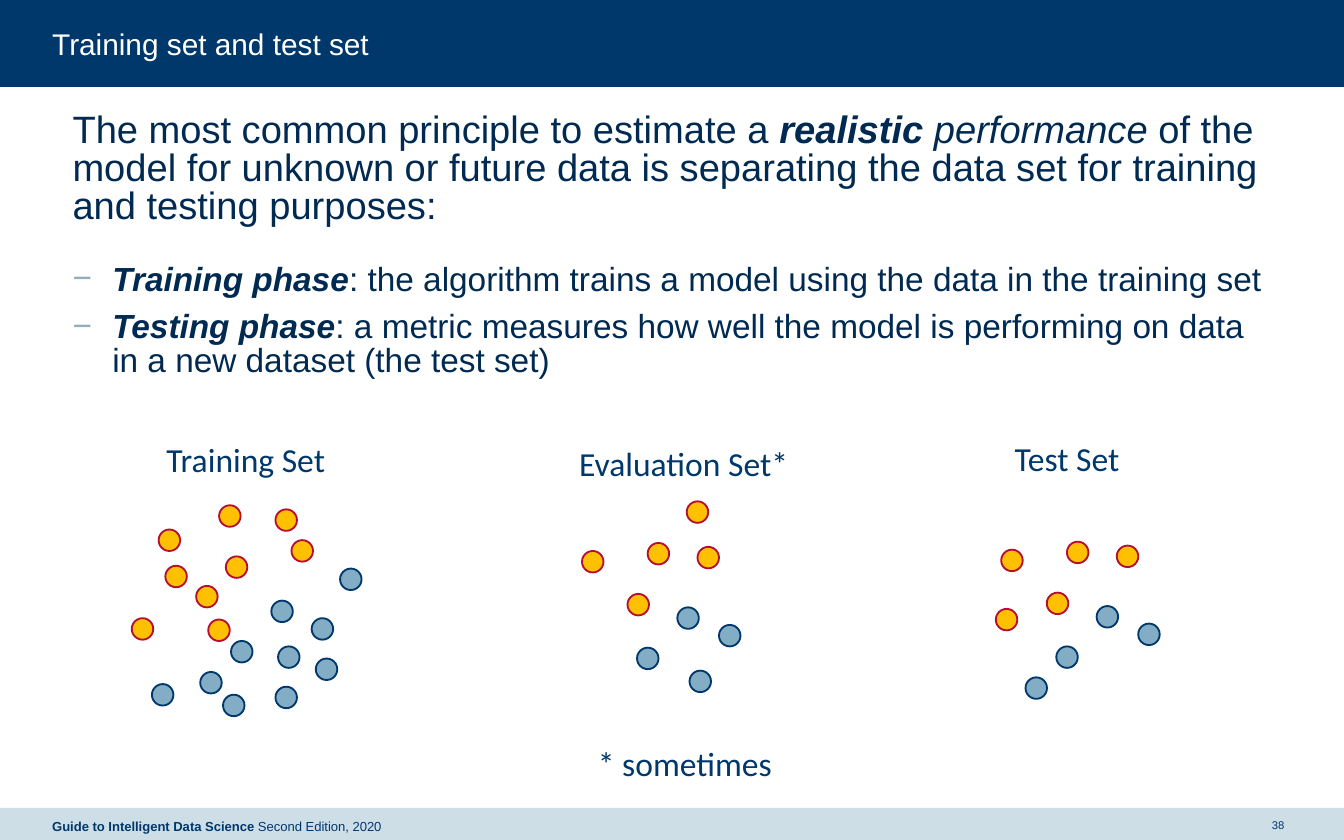
"""Build a slide on training, evaluation and test sets."""
from lxml import etree
from pptx import Presentation
from pptx.dml.color import RGBColor
from pptx.enum.shapes import MSO_SHAPE as SHAPE
from pptx.enum.text import MSO_ANCHOR as ANCHOR, PP_ALIGN as ALIGN
from pptx.oxml.ns import qn
from pptx.util import Pt

NAVY = RGBColor(0x00, 0x38, 0x6C)
INK = RGBColor(0x00, 0x2A, 0x51)
PALE = RGBColor(0xCD, 0xDE, 0xE7)
WHITE = RGBColor(0xFF, 0xFF, 0xFF)
AMBER = RGBColor(0xFF, 0xC0, 0x00)
RED = RGBColor(0xB6, 0x0E, 0x32)
BLUE = RGBColor(0x83, 0xAD, 0xC4)

prs = Presentation()
prs.slide_width, prs.slide_height = Pt(720), Pt(450)
s = prs.slides.add_slide(prs.slide_layouts[6])


def add_shape(kind, x, y, w, h, fill, line=None):
    sp = s.shapes.add_shape(kind, Pt(x), Pt(y), Pt(w), Pt(h))
    sp.shadow.inherit = False
    sp.fill.solid()
    sp.fill.fore_color.rgb = fill
    if line is None:
        sp.line.fill.background()
    else:
        sp.line.color.rgb = line
        sp.line.width = Pt(1)


def add_text(x, y, w, h, paragraphs, size, color=NAVY, font="Arial", inset=0, **frame):
    tf = s.shapes.add_textbox(Pt(x), Pt(y), Pt(w), Pt(h)).text_frame
    tf.word_wrap = True
    tf.margin_left = tf.margin_right = Pt(inset)
    tf.margin_top = tf.margin_bottom = Pt(inset / 2)
    for name, value in frame.items():
        setattr(tf, name, value)
    for i, runs in enumerate(paragraphs):
        p = tf.add_paragraph() if i else tf.paragraphs[0]
        for text, style in runs:
            r = p.add_run()
            r.text = text
            r.font.color.rgb = color
            for name, value in {"name": font, "size": Pt(size), **style}.items():
                setattr(r.font, name, value)
    return tf


add_shape(SHAPE.RECTANGLE, 0, 0, 720, 46.6, NAVY)
add_shape(SHAPE.RECTANGLE, 0, 432.8, 720, 17.2, PALE)
add_text(28, 13.7, 664, 19.4, [[("Training set and test set", {})]], 16, WHITE)
add_text(28, 433.4, 316, 18.7, [[
    ("Guide to Intelligent Data Science ", {"bold": True}),
    ("Second Edition, 2020", {}),
]], 7, vertical_anchor=ANCHOR.MIDDLE)
tf = add_text(677.5, 432.8, 14.4, 18.7, [[("38", {})]], 6, vertical_anchor=ANCHOR.MIDDLE)
tf.paragraphs[0].alignment = ALIGN.CENTER

LEAD = {"size": Pt(20.4)}
STRONG = {"bold": True, "italic": True}
tf = add_text(38.9, 60.5, 638.6, 165, [
    [
        ("The most common principle to estimate a ", LEAD),
        ("realistic", {**LEAD, **STRONG}),
        (" performance ", {**LEAD, "italic": True}),
        ("of the model for unknown or future data is separating the data set "
         "for training and testing purposes:", LEAD),
    ],
    [
        ("Training phase", STRONG),
        (": the algorithm trains a model using the data in the training set", {}),
    ],
    [
        ("Testing phase", STRONG),
        (": a metric measures how well the model is performing on data "
         "in a new dataset (the test set)", {}),
    ],
], 17.9, INK)
for p, before in zip(tf.paragraphs, (7.5, 20.5, 7.5)):
    p.line_spacing = 0.83
    p.space_before = Pt(before)
for p in tf.paragraphs[1:]:
    pPr = p._p.get_or_add_pPr()
    pPr.set("marL", str(Pt(21.3)))
    pPr.set("indent", str(Pt(-21.3)))
    clr = etree.SubElement(pPr, qn("a:buClr"))
    etree.SubElement(clr, qn("a:srgbClr"), val="92AEBC")
    etree.SubElement(pPr, qn("a:buFont"), typeface="Arial")
    etree.SubElement(pPr, qn("a:buChar"), char="−")

for text, x, y, w in (
    ("Training Set", 82.1, 231.8, 100.8),
    ("Evaluation Set*", 303.1, 234, 128.2),
    ("Test Set", 536.4, 231.1, 71.3),
    ("* sometimes", 313.2, 394.6, 108.7),
):
    add_text(x, y, w, 28.8, [[(text, {})]], 18, font="Calibri", inset=7.2, word_wrap=False)

SHARED_AMBER = [(311.8, 295.2), (336.2, 318.2), (347, 290.9), (373.7, 293)]
SHARED_BLUE = [(341.3, 347), (362.9, 325.4), (385.2, 334.8)]
amber = [
    (147.6, 272.9), (105.1, 313.9), (88.6, 303.1), (85, 283.7), (121, 298.1),
    (111.6, 331.9), (117.4, 270.7), (156.2, 289.4), (70.6, 331.2),
    (367.9, 268.6), (533.5, 326.2),
]
blue = [
    (149, 346.3), (182.2, 304.6), (169.2, 352.8), (123.8, 343.4), (145.4, 321.8),
    (167, 331.2), (107.3, 360), (81.4, 366.5), (147.6, 367.9), (119.5, 372.2),
    (369.4, 359.3), (549.4, 362.9),
]
for dx, dy in ((0, 0), (224.6, -0.7)):
    amber += [(x + dx, y + dy) for x, y in SHARED_AMBER]
    blue += [(x + dx, y + dy) for x, y in SHARED_BLUE]
for dots, fill, line in ((amber, AMBER, RED), (blue, BLUE, NAVY)):
    for x, y in dots:
        add_shape(SHAPE.OVAL, x, y, 11.5, 11.5, fill, line)

prs.save("out.pptx")
